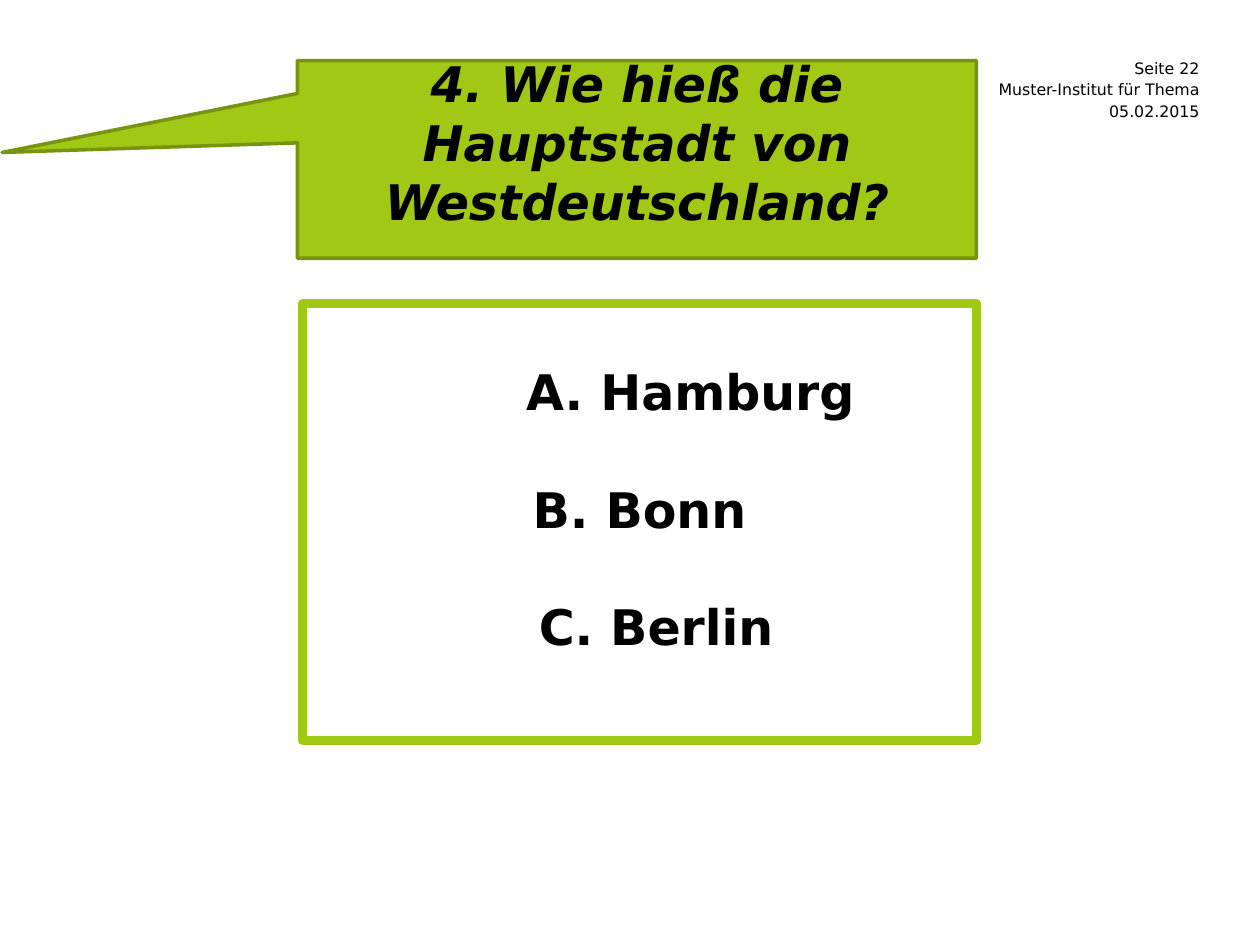
from dataclasses import dataclass

from lxml import etree
from pptx import Presentation
from pptx.dml.color import RGBColor
from pptx.enum.shapes import MSO_SHAPE
from pptx.enum.text import MSO_ANCHOR, MSO_AUTO_SIZE, PP_ALIGN
from pptx.oxml.ns import qn
from pptx.util import Pt

CALLOUT = MSO_SHAPE.RECTANGULAR_CALLOUT
TOP, MIDDLE = MSO_ANCHOR.TOP, MSO_ANCHOR.MIDDLE
CENTER, RIGHT = PP_ALIGN.CENTER, PP_ALIGN.RIGHT
NO_AUTOFIT = MSO_AUTO_SIZE.NONE


@dataclass(frozen=True)
class Theme:
    font: str = "DejaVu Sans"
    text: RGBColor = RGBColor(0, 0, 0)
    green: RGBColor = RGBColor(0xA0, 0xC8, 0x14)
    dark_green: RGBColor = RGBColor(0x76, 0x94, 0x0F)
    quiz_size: float = 28
    quiz_line: float = 33.6
    header_size: float = 9


@dataclass(frozen=True)
class Box:
    left: float
    top: float
    width: float
    height: float

    def lengths(self):
        return [Pt(value) for value in (self.left, self.top, self.width, self.height)]


THEME = Theme()


def place(shape, box):
    shape.left, shape.top, shape.width, shape.height = box.lengths()


def prepare_frame(frame, anchor, side=0, top=0):
    frame.word_wrap = True
    frame.auto_size = NO_AUTOFIT
    frame.vertical_anchor = anchor
    frame.margin_left = frame.margin_right = Pt(side)
    frame.margin_top, frame.margin_bottom = Pt(top), 0


def write(paragraph, text, *, size, align, bold=False, italic=False,
          line=None, before=0, indent=0):
    properties = paragraph._p.get_or_add_pPr()
    properties.set("marL", str(Pt(indent)))
    properties.set("indent", "0")
    etree.SubElement(properties, qn("a:buNone"))
    paragraph.alignment = align
    paragraph.space_before = Pt(before)
    paragraph.space_after = Pt(0)
    if line:
        paragraph.line_spacing = Pt(line)
    run = paragraph.add_run()
    run.text = text
    font = run.font
    font.name, font.size = THEME.font, Pt(size)
    font.bold, font.italic = bold, italic
    font.color.rgb = THEME.text


def outline(shape, color, width):
    shape.line.color.rgb = color
    shape.line.width = Pt(width)
    etree.SubElement(shape.element.spPr.find(qn("a:ln")), qn("a:round"))


def add_header(slide, box, lines):
    step = 12.24
    for index, text in enumerate(lines):
        row = Box(box.left, box.top + index * step, box.width, box.height)
        frame = slide.shapes.add_textbox(*row.lengths()).text_frame
        prepare_frame(frame, MIDDLE)
        write(frame.paragraphs[0], text, size=THEME.header_size, align=RIGHT)


def add_question(slide, box, text):
    callout = slide.shapes.add_shape(CALLOUT, *box.lengths())
    callout.adjustments[0] = -0.935
    callout.adjustments[1] = -0.035
    callout.shadow.inherit = False
    callout.fill.solid()
    callout.fill.fore_color.rgb = THEME.green
    outline(callout, THEME.dark_green, 2)

    # The title lies in front of the callout
    title = slide.shapes.title
    place(title, Box(box.left, box.top - 3.9, box.width, 3 * THEME.quiz_line))
    callout.element.addnext(title.element)
    prepare_frame(title.text_frame, TOP, side=7.2)
    write(title.text_frame.paragraphs[0], text, size=THEME.quiz_size, align=CENTER,
          bold=True, italic=True, line=THEME.quiz_line)


def add_answers(slide, box, answers):
    body = slide.placeholders[1]
    place(body, box)
    outline(body, THEME.green, 5)
    frame = body.text_frame
    prepare_frame(frame, TOP, side=7.2, top=33.2)
    for index, (text, indent) in enumerate(answers):
        paragraph = frame.add_paragraph() if index else frame.paragraphs[0]
        write(paragraph, text, size=THEME.quiz_size, align=CENTER, bold=True,
              line=THEME.quiz_line, before=THEME.quiz_line if index else 0,
              indent=indent)


def main():
    presentation = Presentation()
    presentation.slide_width, presentation.slide_height = Pt(720), Pt(540)
    slide = presentation.slides.add_slide(presentation.slide_layouts[1])

    # Page details, top right
    add_header(slide, Box(527, 33.1, 158.4, 11.5),
               ["Seite 22", "Muster-Institut für Thema", "05.02.2015"])
    # Question and its possible answers, each with its left indent
    add_question(slide, Box(170, 34.6, 388, 113),
                 "4. Wie hieß die Hauptstadt von Westdeutschland?")
    add_answers(slide, Box(172.8, 173.5, 385.2, 249.8),
                [("A. Hamburg", 58), ("B. Bonn", 0), ("C. Berlin", 19)])

    presentation.save("out.pptx")


if __name__ == "__main__":
    main()
